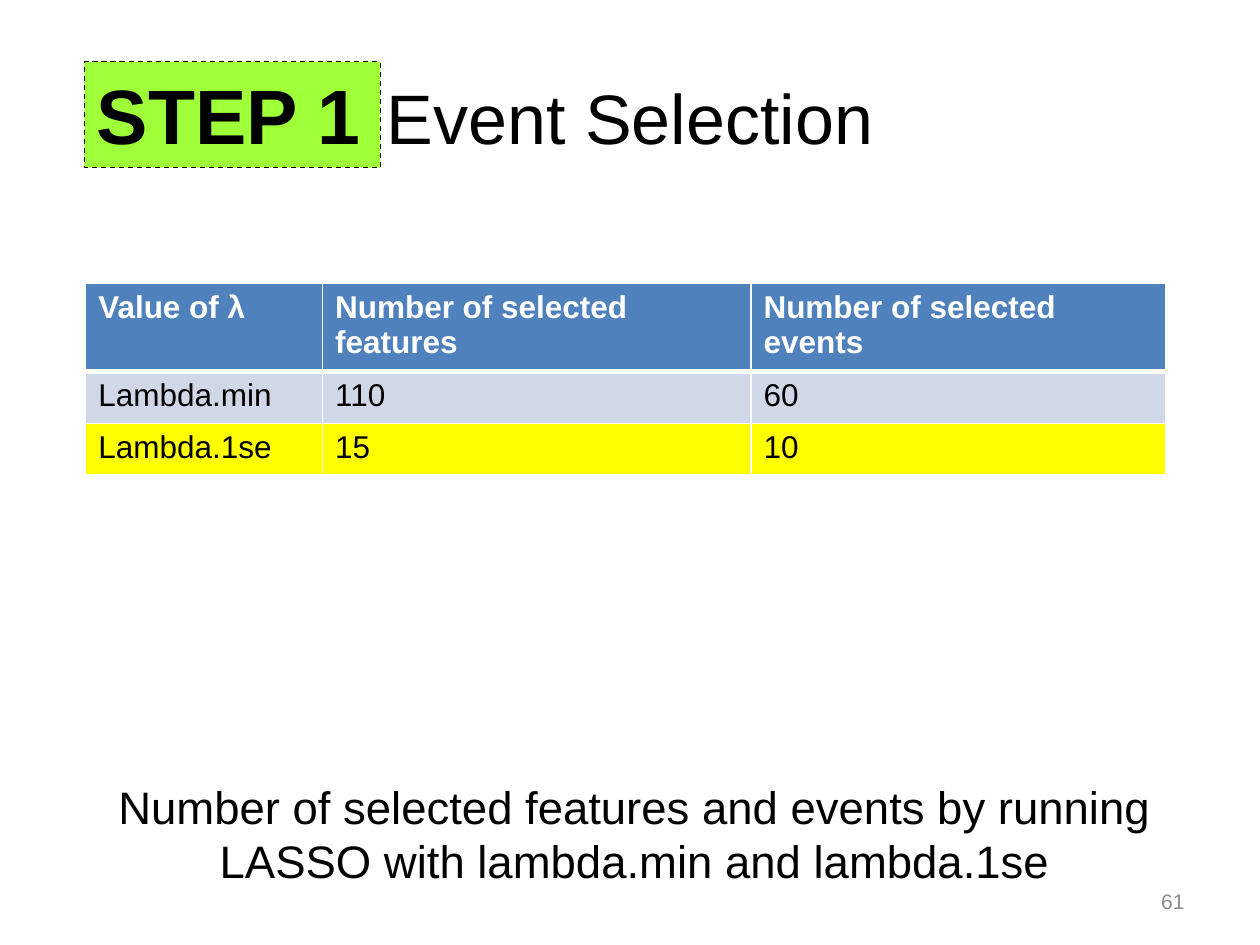
from dataclasses import dataclass

from lxml.etree import SubElement
from pptx import Presentation
from pptx.dml.color import RGBColor
from pptx.enum.dml import MSO_LINE
from pptx.enum.shapes import MSO_SHAPE
from pptx.enum.text import MSO_ANCHOR, PP_ALIGN
from pptx.oxml.ns import qn
from pptx.slide import Slide
from pptx.table import _Cell
from pptx.text.text import TextFrame
from pptx.util import Inches, Pt

BLACK = RGBColor(0x00, 0x00, 0x00)
WHITE = RGBColor(0xFF, 0xFF, 0xFF)
GREY = RGBColor(0x8C, 0x8C, 0x8C)
GREEN = RGBColor(0x9F, 0xFF, 0x38)
BLUE = RGBColor(0x4F, 0x81, 0xBD)
PALE_BLUE = RGBColor(0xD0, 0xD8, 0xE8)
YELLOW = RGBColor(0xFF, 0xFF, 0x00)

FONT = "Arial"
COLUMN_WIDTHS = (1.88, 3.4, 3.29)


@dataclass(frozen=True)
class Box:
    left: float
    top: float
    width: float
    height: float

    def emu(self) -> tuple[int, ...]:
        return tuple(Inches(n) for n in (self.left, self.top, self.width, self.height))


@dataclass(frozen=True)
class Label:
    text: str
    size: float
    color: RGBColor = BLACK
    bold: bool = False
    align: PP_ALIGN = PP_ALIGN.LEFT
    anchor: MSO_ANCHOR = MSO_ANCHOR.TOP


@dataclass(frozen=True)
class Row:
    values: tuple[str, str, str]
    fill: RGBColor
    height: float = 0.41
    color: RGBColor = BLACK
    bold: bool = False
    rule_below: float = 1


ROWS = (
    Row(("Value of λ", "Number of selected features", "Number of selected events"),
        BLUE, 0.69, WHITE, True, 3),
    Row(("Lambda.min", "110", "60"), PALE_BLUE),
    Row(("Lambda.1se", "15", "10"), YELLOW),
)

TEXTS = (
    (Box(7.17, 6.95, 2.33, 0.4),
     Label("61", 12, GREY, align=PP_ALIGN.RIGHT, anchor=MSO_ANCHOR.MIDDLE)),
    (Box(0.5, 0.3, 9, 1.25),
     Label("Event Selection", 40, align=PP_ALIGN.CENTER, anchor=MSO_ANCHOR.MIDDLE)),
    (Box(0.33, 6.13, 9.42, 0.98),
     Label("Number of selected features and events by running "
           "LASSO with lambda.min and lambda.1se", 26, align=PP_ALIGN.CENTER)),
)


def write(frame: TextFrame, label: Label) -> None:
    frame.word_wrap = True
    frame.vertical_anchor = label.anchor
    paragraph = frame.paragraphs[0]
    paragraph.alignment = label.align
    run = paragraph.add_run()
    run.text = label.text
    run.font.name = FONT
    run.font.size = Pt(label.size)
    run.font.bold = label.bold
    run.font.color.rgb = label.color


def draw_step_badge(slide: Slide, box: Box, label: Label) -> None:
    badge = slide.shapes.add_shape(MSO_SHAPE.RECTANGLE, *box.emu())
    badge.shadow.inherit = False
    badge.fill.solid()
    badge.fill.fore_color.rgb = GREEN
    badge.line.color.rgb = BLACK
    badge.line.width = Pt(0.75)
    badge.line.dash_style = MSO_LINE.DASH
    write(badge.text_frame, label)


def draw_borders(cell: _Cell, top: float, bottom: float) -> None:
    properties = cell._tc.get_or_add_tcPr()
    for side, width in (("lnL", 1), ("lnR", 1), ("lnT", top), ("lnB", bottom)):
        border = SubElement(properties, qn(f"a:{side}"), w=str(Pt(width)))
        paint = SubElement(border, qn("a:solidFill"))
        SubElement(paint, qn("a:srgbClr"), val=str(WHITE))


def draw_results(slide: Slide, left: float, top: float) -> None:
    box = Box(left, top, sum(COLUMN_WIDTHS), sum(row.height for row in ROWS))
    results = slide.shapes.add_table(len(ROWS), len(COLUMN_WIDTHS), *box.emu()).table
    for column, width in zip(results.columns, COLUMN_WIDTHS):
        column.width = Inches(width)
    rule_above = 1
    for table_row, row in zip(results.rows, ROWS):
        table_row.height = Inches(row.height)
        for cell, value in zip(table_row.cells, row.values):
            draw_borders(cell, rule_above, row.rule_below)
            cell.fill.solid()
            cell.fill.fore_color.rgb = row.fill
            write(cell.text_frame, Label(value, 18, row.color, row.bold))
        rule_above = row.rule_below


def main() -> None:
    deck = Presentation()
    deck.slide_width, deck.slide_height = Inches(10), Inches(7.5)
    slide = deck.slides.add_slide(deck.slide_layouts[6])
    for box, label in TEXTS:
        write(slide.shapes.add_textbox(*box.emu()).text_frame, label)
    draw_step_badge(slide, Box(0.67, 0.49, 2.35, 0.84), Label("STEP 1", 44, bold=True))
    draw_results(slide, 0.68, 2.25)
    deck.save("out.pptx")


if __name__ == "__main__":
    main()
